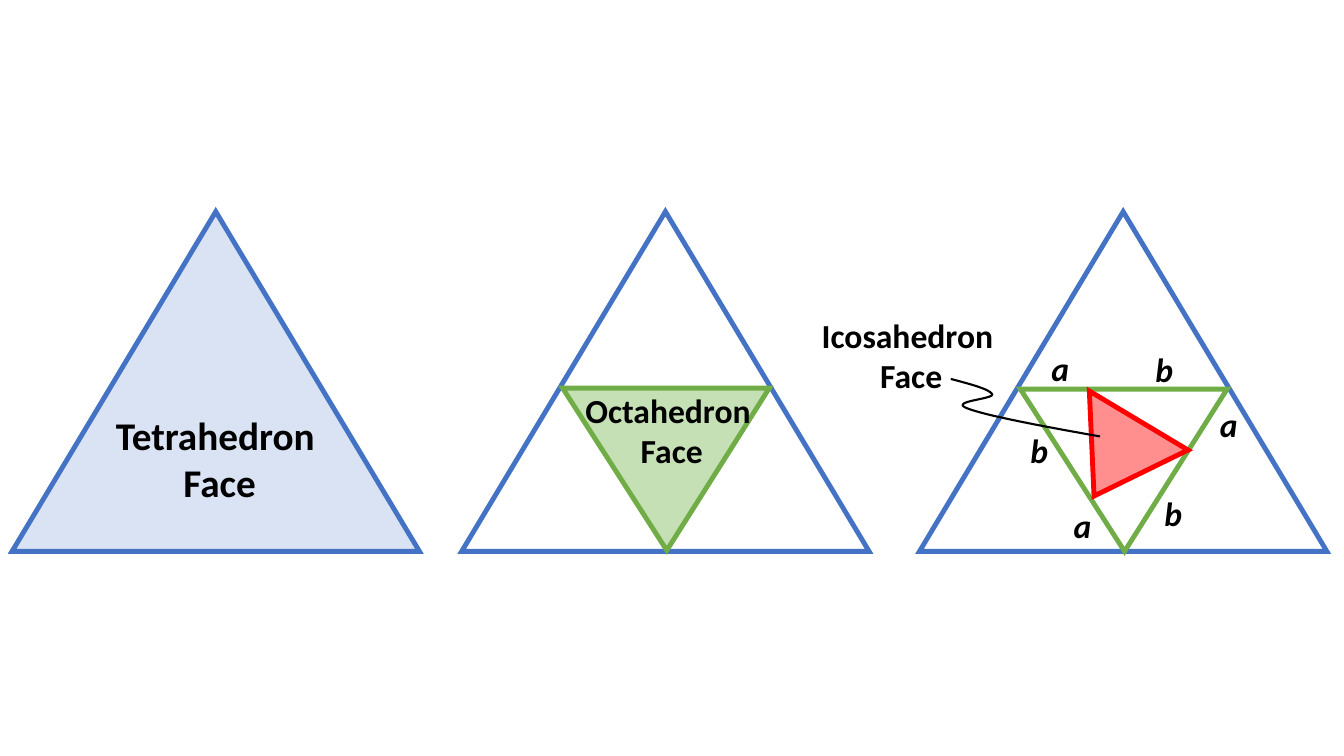
from lxml import etree
from pptx import Presentation
from pptx.dml.color import RGBColor
from pptx.enum.shapes import MSO_SHAPE
from pptx.enum.text import MSO_AUTO_SIZE, PP_ALIGN
from pptx.oxml.ns import qn
from pptx.util import Inches, Pt

BLUE, GREEN, RED, BLACK = "4472C4", "70AD47", "FF0000", "000000"


def color(code):
    """Turn a hex string into a colour."""
    return RGBColor.from_string(code)


def write_span(para, text, size=24, bold=True, italic=False, ink=BLACK, font="Calibri"):
    """Add formatted text to a paragraph."""
    span = para.add_run()
    span.text = text
    span.font.name = font
    span.font.size = Pt(size)
    span.font.bold = bold
    span.font.italic = italic
    span.font.color.rgb = color(ink)


def bezier(start, first, second, end, steps=24):
    """Return points along a cubic curve, without its start."""
    points = []
    for step in range(1, steps + 1):
        t = step / steps
        weights = ((1 - t) ** 3, 3 * t * (1 - t) ** 2, 3 * t * t * (1 - t), t ** 3)
        controls = (start, first, second, end)
        points.append(tuple(sum(w * c[axis] for w, c in zip(weights, controls))
                            for axis in (0, 1)))
    return points


class FaceDiagram:
    """Draws triangles, labels and curves on the current slide."""

    def __init__(self, page):
        """Keep the slide to draw on."""
        self.page = page

    def finish(self, shape, fill, line, width):
        """Set the fill and outline of a shape."""
        shape.shadow.inherit = False
        if fill:
            shape.fill.solid()
            shape.fill.fore_color.rgb = color(fill)
        else:
            shape.fill.background()
        shape.line.color.rgb = color(line)
        shape.line.width = Pt(width)
        outline = shape._element.spPr.find(qn("a:ln"))
        etree.SubElement(outline, qn("a:miter"), lim="800000")

    def triangle(self, left, top, width, height, line, fill=None, rotation=0, apex=0.5):
        """Draw a triangle."""
        shape = self.page.shapes.add_shape(
            MSO_SHAPE.ISOSCELES_TRIANGLE,
            Inches(left), Inches(top), Inches(width), Inches(height))
        shape.adjustments[0] = apex
        shape.rotation = rotation
        self.finish(shape, fill, line, 3.5)

    def label(self, lines, left, top, width, height, align=PP_ALIGN.LEFT, **style):
        """Write a label with one paragraph for each line."""
        box = self.page.shapes.add_textbox(
            Inches(left), Inches(top), Inches(width), Inches(height))
        frame = box.text_frame
        frame.word_wrap = True
        frame.auto_size = MSO_AUTO_SIZE.SHAPE_TO_FIT_TEXT
        for index, text in enumerate(lines):
            para = frame.add_paragraph() if index else frame.paragraphs[0]
            para.alignment = align
            write_span(para, text, **style)

    def curve(self, start, segments, line, width):
        """Draw an open line through cubic segments."""
        points = [start]
        for segment in segments:
            points += bezier(points[-1], *segment)
        points = [(Inches(x), Inches(y)) for x, y in points]
        builder = self.page.shapes.build_freeform(*points[0])
        builder.add_line_segments(points[1:], close=False)
        self.finish(builder.convert_to_shape(), None, line, width)


def main():
    """Build and save the slide."""
    deck = Presentation()
    deck.slide_width, deck.slide_height = Inches(13.33), Inches(7.5)
    diagram = FaceDiagram(deck.slides.add_slide(deck.slide_layouts[6]))

    for left, fill in ((0.12, "DAE3F3"), (4.58, None), (9.12, None)):
        diagram.triangle(left, 2.1, 4.04, 3.37, BLUE, fill)
    for left, top, fill in ((5.58, 3.85, "C5E0B4"), (10.12, 3.86, None)):
        diagram.triangle(left, top, 2.05, 1.61, GREEN, fill, rotation=180, apex=0.496)
    diagram.triangle(10.5, 4.11, 1.14, 0.87, RED, "FF8F8F", rotation=210.9, apex=0.496)

    for solid, left, top, width, height, size in (
            ("Tetrahedron", 0.81, 4.03, 2.65, 1.04, 28),
            ("Octahedron", 5.3, 3.82, 2.65, 0.91, 24),
            ("Icosahedron", 7.82, 3.07, 2.36, 0.91, 24)):
        diagram.label((solid, " Face"), left, top, width, height,
                      align=PP_ALIGN.CENTER, size=size)

    diagram.curve((10.91, 4.33), (
        ((10.34, 4.23), (9.76, 4.12), (9.59, 4.05)),
        ((9.41, 3.98), (9.87, 3.96), (9.84, 3.91)),
        ((9.81, 3.86), (9.62, 3.81), (9.43, 3.76))), BLACK, 1.5)

    for letter, left, top in (("a", 10.33, 3.4), ("b", 11.36, 3.41), ("a", 10.55, 4.96),
                              ("a", 12, 3.96), ("b", 11.45, 4.84), ("b", 10.12, 4.22)):
        diagram.label((letter,), left, top, 0.42, 0.5, italic=True)

    deck.save("out.pptx")


if __name__ == "__main__":
    main()
